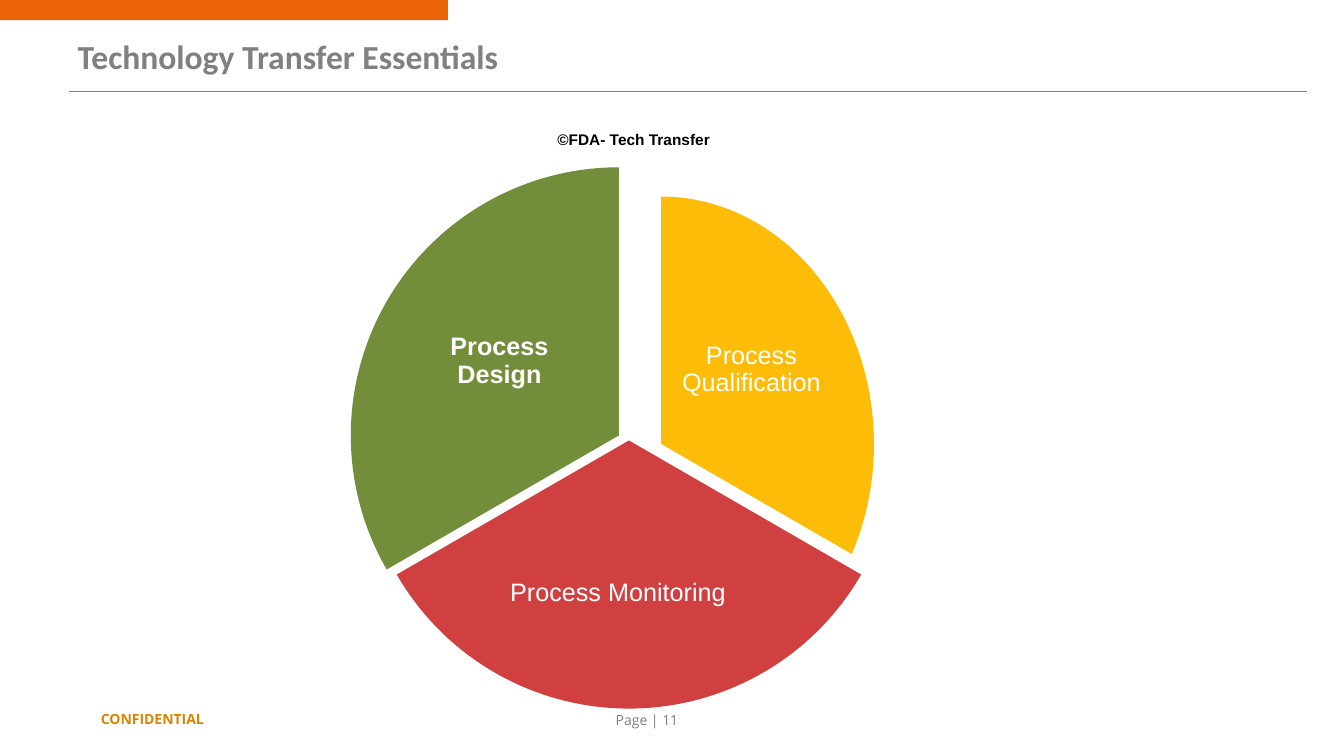
import pptx
import pptx.dml.color
import pptx.enum.shapes
import pptx.enum.text
import pptx.oxml
import pptx.oxml.ns
import pptx.util
from dataclasses import dataclass

ALIGN = pptx.enum.text.PP_ALIGN
ANCHOR = pptx.enum.text.MSO_ANCHOR
SHAPE = pptx.enum.shapes.MSO_SHAPE

# The grid has ten columns and ten rows to the inch
CELL = 0.1
COLUMNS, ROWS = 133.33, 75


@dataclass(frozen=True)
class Theme:
    orange: str = "EC6408"
    amber: str = "DB8300"
    gray: str = "808080"
    black: str = "000000"
    white: str = "FFFFFF"
    yellow: str = "FCBC08"
    red: str = "D04040"
    green: str = "728E3A"
    heading_font: str = "Calibri"
    body_font: str = "Arial"
    footer_font: str = "Open Sans"
    heading_size: int = 24
    label_size: int = 18
    caption_size: int = 11
    footer_size: int = 10


def grid(*cells):
    return [pptx.util.Inches(cell * CELL) for cell in cells]


def apply(target, values):
    for name, value in values.items():
        setattr(target, name, value)


class SlideBuilder:
    def __init__(self, slide, theme):
        self.slide = slide
        self.theme = theme

    def add_words(self, frame, text, font, size, color, bold=False, paragraph_format=None):
        paragraph = frame.paragraphs[0]
        apply(paragraph, paragraph_format or {})
        run = paragraph.add_run()
        run.text = text
        apply(run.font, {"name": font, "size": pptx.util.Pt(size), "bold": bold})
        run.font.color.rgb = pptx.dml.color.RGBColor.from_string(color)

    def title(self, box, text):
        title = self.slide.shapes.title
        apply(title, dict(zip(("left", "top", "width", "height"), grid(*box))))
        apply(title.text_frame, {"vertical_anchor": ANCHOR.TOP, "word_wrap": True})
        self.add_words(title.text_frame, text, self.theme.heading_font,
                       self.theme.heading_size, self.theme.gray, True,
                       {"alignment": ALIGN.LEFT})

    def text(self, box, text, font, size, color, bold=False, frame_format=None,
             paragraph_format=None):
        frame = self.slide.shapes.add_textbox(*grid(*box)).text_frame
        apply(frame, {"word_wrap": True, **(frame_format or {})})
        self.add_words(frame, text, font, size, color, bold, paragraph_format)

    def shape(self, kind, box, color, adjustments=()):
        shape = self.slide.shapes.add_shape(kind, *grid(*box))
        for index, value in enumerate(adjustments):
            shape.adjustments[index] = value
        shape.shadow.inherit = False
        shape.fill.solid()
        shape.fill.fore_color.rgb = pptx.dml.color.RGBColor.from_string(color)
        shape.line.fill.background()

    def rule(self, start, end, color, width):
        connector = self.slide.shapes.add_connector(
            pptx.enum.shapes.MSO_CONNECTOR.STRAIGHT, *grid(*start, *end))
        connector.line.width = pptx.util.Pt(width)
        connector.line.color.rgb = pptx.dml.color.RGBColor.from_string(color)
        properties = connector.element.find(pptx.oxml.ns.qn("p:spPr"))
        properties.append(pptx.oxml.parse_xml(
            "<a:effectLst %s/>" % pptx.oxml.ns.nsdecls("a")))

    def slice(self, box, angles, color, label_box, label, alignment, bold):
        self.shape(SHAPE.PIE, box, color, angles)
        inset = pptx.util.Inches(0.02)
        margins = {f"margin_{side}": inset for side in ("left", "right", "top", "bottom")}
        self.text(label_box, label, self.theme.body_font, self.theme.label_size,
                  self.theme.white, bold, {"vertical_anchor": ANCHOR.MIDDLE, **margins},
                  {"alignment": alignment, "line_spacing": 0.9})


def main():
    presentation = pptx.Presentation()
    presentation.slide_width, presentation.slide_height = grid(COLUMNS, ROWS)
    theme = Theme()
    slide = presentation.slides.add_slide(presentation.slide_layouts[5])
    builder = SlideBuilder(slide, theme)

    # Header
    builder.shape(SHAPE.RECTANGLE, (0, 0, COLUMNS / 3, 2), theme.orange)
    builder.title((6.7, 3.1, 120, 5), "Technology Transfer Essentials")
    builder.rule((6.8, 9.1), (129.7, 9.1), theme.gray, 0.75)

    # Footer
    builder.text((60.1, 70.1, 19.5, 2.4), "Page | 11", theme.footer_font,
                 theme.footer_size, theme.gray)
    builder.text((4.4, 70, 16.8, 2.4), "CONFIDENTIAL", theme.footer_font, theme.footer_size,
                 theme.amber, True, paragraph_format={"alignment": ALIGN.RIGHT})

    # Three equal slices, clockwise from the top
    slices = [
        ((44.5, 19.5, 42.2, 49.1), theme.yellow,
         (67.4, 28.5, 14.3, 16.4), "Process Qualification", ALIGN.CENTER, False),
        ((35.8, 17.1, 53.2, 53.2), theme.red,
         (50.4, 50.6, 24.1, 16.5), "Process Monitoring", ALIGN.LEFT, False),
        ((34.8, 16.6, 53.2, 53.2), theme.green,
         (40.5, 27, 18.1, 17.7), "Process Design", ALIGN.CENTER, True),
    ]
    full_turn = 216  # adjustment units in 360 degrees
    top = full_turn * 3 / 4
    sweep = full_turn / len(slices)
    for index, (box, color, label_box, label, alignment, bold) in enumerate(slices):
        start = (top + index * sweep) % full_turn
        builder.slice(box, (start, (start + sweep) % full_turn), color,
                      label_box, label, alignment, bold)

    # Source caption
    builder.text((54.3, 12.4, 17.5, 2.9), "©FDA- Tech Transfer", theme.body_font,
                 theme.caption_size, theme.black, True,
                 {"word_wrap": False,
                  "auto_size": pptx.enum.text.MSO_AUTO_SIZE.SHAPE_TO_FIT_TEXT})

    presentation.save("out.pptx")


if __name__ == "__main__":
    main()
